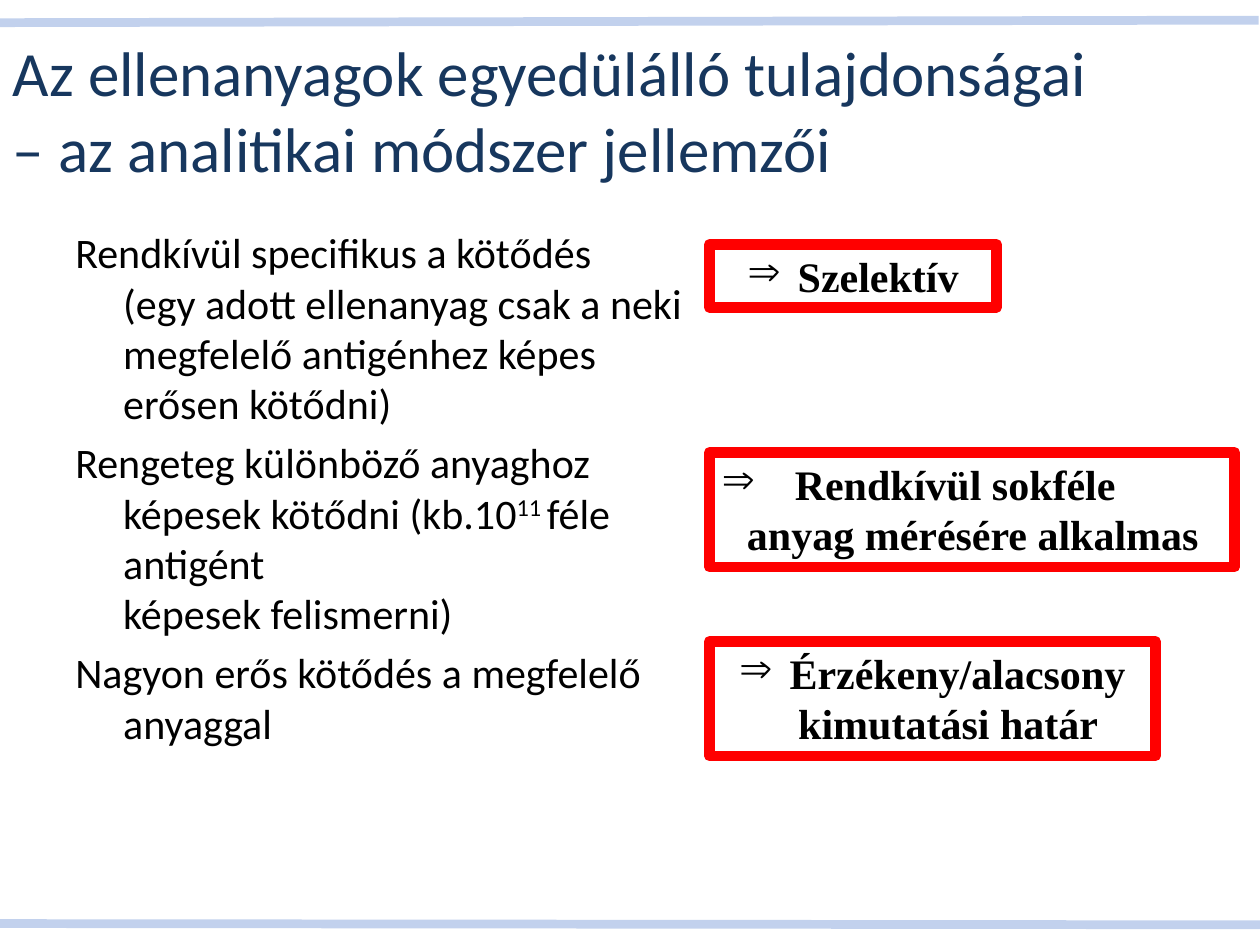
import dataclasses

import lxml.etree
import pptx
import pptx.dml.color
import pptx.enum.shapes
import pptx.enum.text
import pptx.oxml.ns
import pptx.util

Inches = pptx.util.Inches
Pt = pptx.util.Pt
qn = pptx.oxml.ns.qn
RGB = pptx.dml.color.RGBColor.from_string
ALIGN = pptx.enum.text.PP_ALIGN
AUTO_SIZE = pptx.enum.text.MSO_AUTO_SIZE


@dataclasses.dataclass(frozen=True)
class Theme:
    """Colours, fonts and sizes of the slide."""

    rule: str = "C2D1ED"
    title: str = "17375E"
    text: str = "000000"
    box_fill: str = "FFFFFF"
    box_line: str = "FF0000"
    body_font: str = "Calibri"
    box_font: str = "Times New Roman"
    title_size: int = 36
    text_size: int = 24
    rule_width: int = 5
    box_width: int = 6


THEME = Theme()

TITLE = "Az ellenanyagok egyedülálló tulajdonságai – az analitikai módszer jellemzői"
SUPERSCRIPT = "11 "
PROPERTIES = [
    [
        "Rendkívül specifikus a kötődés",
        "\n",
        "(egy adott ellenanyag csak a neki",
        "\n",
        "megfelelő antigénhez képes erősen kötődni)",
    ],
    [
        "Rengeteg különböző anyaghoz",
        "\n",
        "képesek kötődni (kb.10",
        SUPERSCRIPT,
        "féle antigént",
        "\n",
        "képesek felismerni)",
    ],
    ["Nagyon erős kötődés a megfelelő anyaggal"],
]
BOX_LEFT = 5.63
CONCLUSIONS = [
    (1.94, 2.28, 0.5, ALIGN.CENTER, [("Szelektív", 0.4, True)]),
    (3.59, 4.17, 0.91, ALIGN.LEFT,
     [("Rendkívül sokféle", 0.58, True), ("anyag mérésére alkalmas", 0.2, False)]),
    (5.09, 3.54, 0.91, ALIGN.CENTER,
     [("Érzékeny/alacsony", 0.4, True), ("kimutatási határ", 0.25, False)]),
]
RULES = [(-0.02, 0.18, 9.99, 0.16), (0, 7.33, 10.04, 7.34)]


def add_run(paragraph, text, font_name, size, color, bold=False):
    """Append a formatted run and return it."""
    run = paragraph.add_run()
    run.text = text
    run.font.name = font_name
    run.font.size = Pt(size)
    run.font.bold = bold
    run.font.color.rgb = RGB(color)
    return run


def set_indent(paragraph, margin, hanging=0.0, bullet=None):
    """Set the left margin, the hanging indent and an optional bullet."""
    properties = paragraph._p.get_or_add_pPr()
    properties.set("marL", str(Inches(margin)))
    properties.set("indent", str(-Inches(hanging)))
    if bullet:
        lxml.etree.SubElement(properties, qn("a:buChar")).set("char", bullet)
    else:
        lxml.etree.SubElement(properties, qn("a:buNone"))


def next_paragraph(text_frame, index):
    """Return the first paragraph of the frame or a new one."""
    return text_frame.add_paragraph() if index else text_frame.paragraphs[0]


def add_rule(slide, start_x, start_y, end_x, end_y):
    """Draw a pale line across the slide."""
    connector = slide.shapes.add_connector(
        pptx.enum.shapes.MSO_CONNECTOR.STRAIGHT,
        Inches(start_x), Inches(start_y), Inches(end_x), Inches(end_y))
    connector.line.color.rgb = RGB(THEME.rule)
    connector.line.width = Pt(THEME.rule_width)
    lxml.etree.SubElement(connector._element.spPr, qn("a:effectLst"))


def set_title(slide):
    """Place and fill the title placeholder."""
    title = slide.shapes.title
    title.left, title.top = Inches(0), Inches(0.28)
    title.width, title.height = Inches(9), Inches(1.18)
    text_frame = title.text_frame
    text_frame.word_wrap = True
    text_frame.auto_size = AUTO_SIZE.NONE
    text_frame.vertical_anchor = pptx.enum.text.MSO_ANCHOR.MIDDLE
    paragraph = text_frame.paragraphs[0]
    paragraph.alignment = ALIGN.LEFT
    add_run(paragraph, TITLE, THEME.body_font, THEME.title_size, THEME.title)


def add_properties(slide):
    """Write the antibody properties with hanging indents."""
    text_box = slide.shapes.add_textbox(
        Inches(0.5), Inches(1.75), Inches(5.13), Inches(4.95))
    text_frame = text_box.text_frame
    text_frame.word_wrap = True
    for index, parts in enumerate(PROPERTIES):
        paragraph = next_paragraph(text_frame, index)
        set_indent(paragraph, 0.38, 0.38)
        paragraph.space_before = Pt(THEME.text_size * 0.2 if index else 0)
        for part in parts:
            if part == "\n":
                paragraph.add_line_break()
                continue
            run = add_run(paragraph, part, THEME.body_font, THEME.text_size, THEME.text)
            if part == SUPERSCRIPT:
                run._r.get_or_add_rPr().set("baseline", "30000")


def add_conclusion(slide, top, width, height, alignment, lines):
    """Draw a red framed box with its bulleted conclusion."""
    shape = slide.shapes.add_shape(
        pptx.enum.shapes.MSO_SHAPE.RECTANGLE,
        Inches(BOX_LEFT), Inches(top), Inches(width), Inches(height))
    shape.shadow.inherit = False
    shape.fill.solid()
    shape.fill.fore_color.rgb = RGB(THEME.box_fill)
    shape.line.color.rgb = RGB(THEME.box_line)
    shape.line.width = Pt(THEME.box_width)
    text_frame = shape.text_frame
    text_frame.word_wrap = True
    text_frame.auto_size = AUTO_SIZE.SHAPE_TO_FIT_TEXT
    text_frame.vertical_anchor = pptx.enum.text.MSO_ANCHOR.TOP
    for index, (text, margin, bulleted) in enumerate(lines):
        paragraph = next_paragraph(text_frame, index)
        paragraph.alignment = alignment
        if bulleted:
            set_indent(paragraph, margin, margin, "⇒")
        else:
            set_indent(paragraph, margin)
        add_run(paragraph, text, THEME.box_font, THEME.text_size, THEME.text, bold=True)


def main():
    """Build and save the slide."""
    presentation = pptx.Presentation()
    presentation.slide_width = Inches(10)
    presentation.slide_height = Inches(7.5)
    slide = presentation.slides.add_slide(presentation.slide_layouts[5])
    for rule in RULES:
        add_rule(slide, *rule)
    set_title(slide)
    add_properties(slide)
    for conclusion in CONCLUSIONS:
        add_conclusion(slide, *conclusion)
    presentation.save("out.pptx")


if __name__ == "__main__":
    main()
